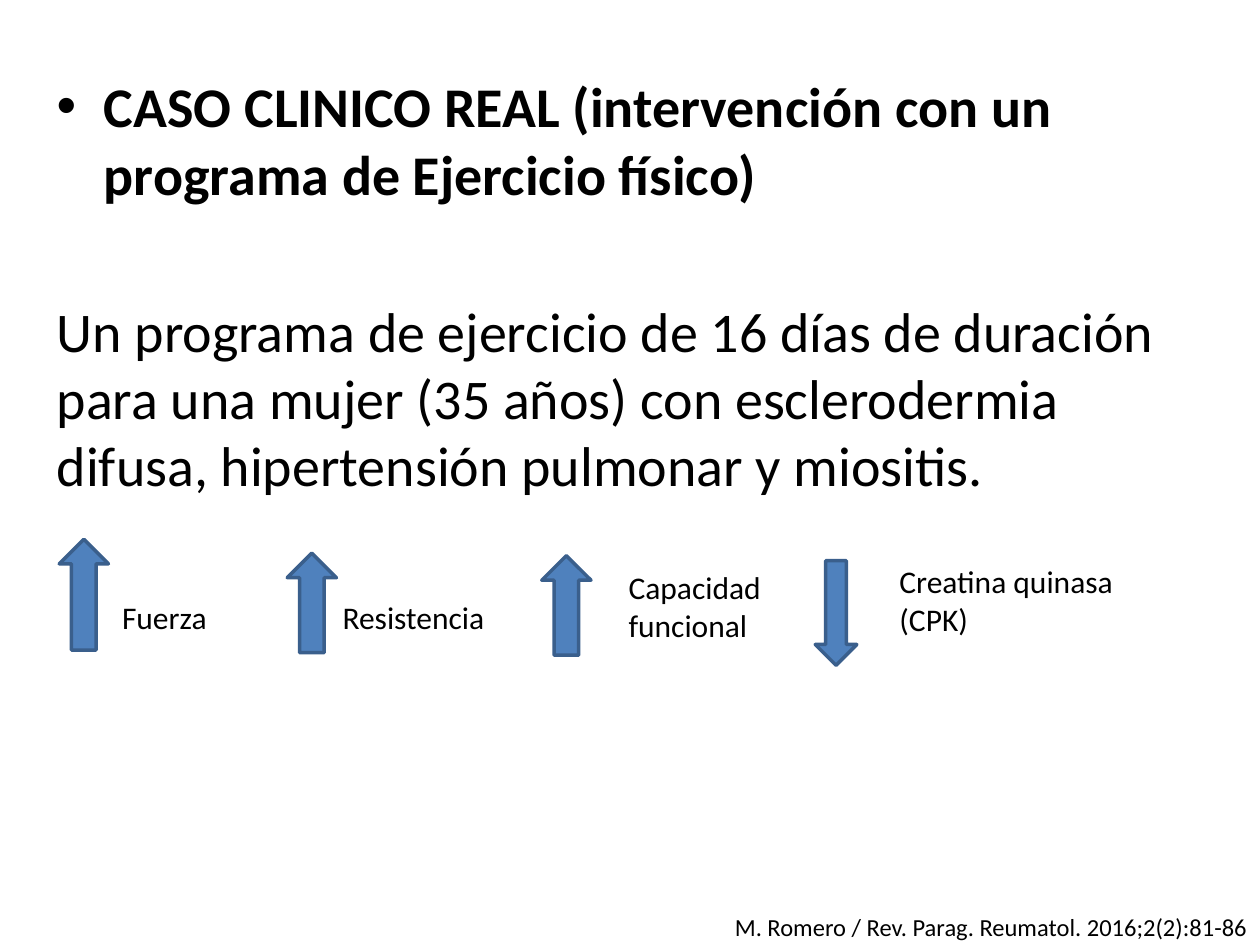
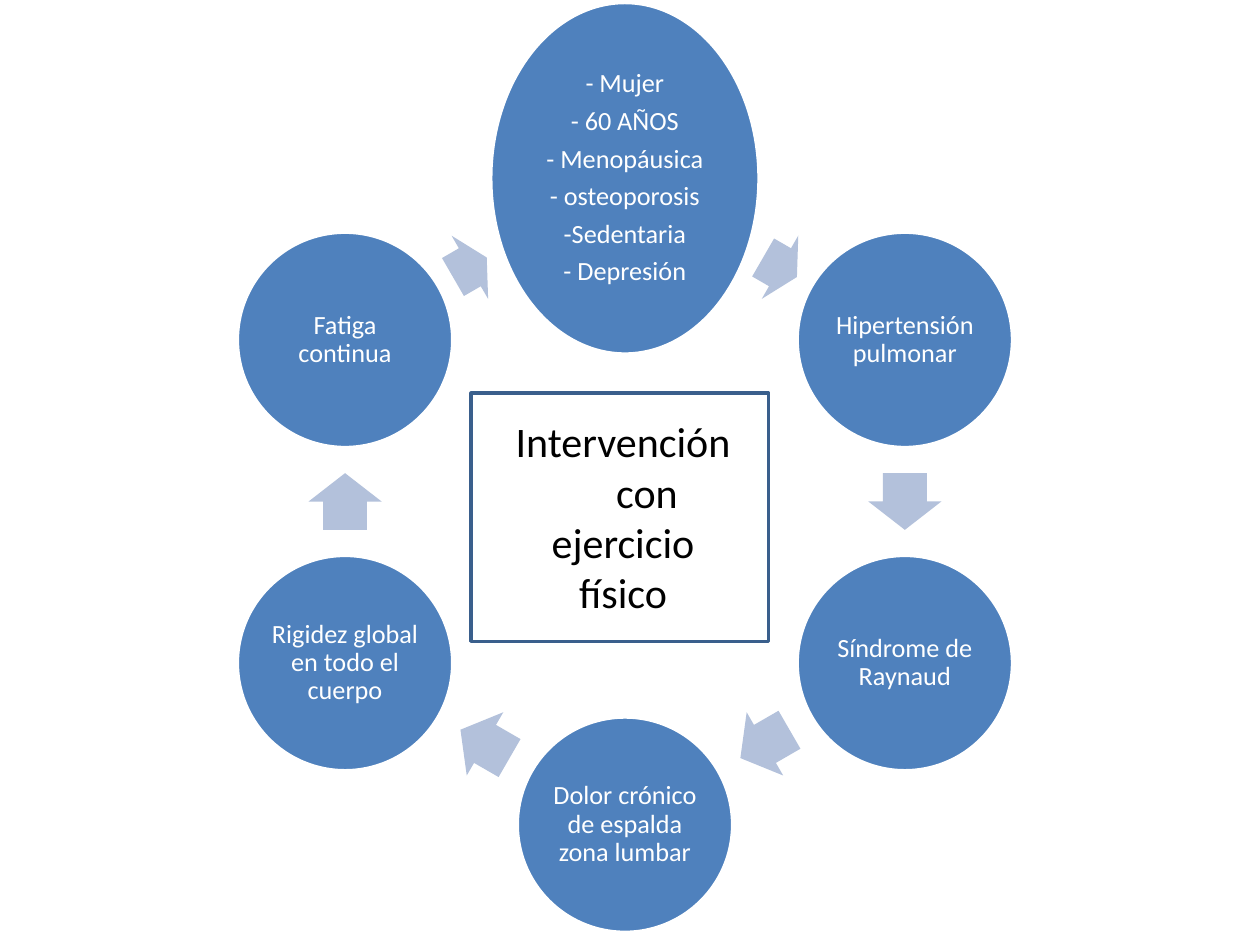
from dataclasses import dataclass, field
from math import cos, radians, sin
from typing import Any

from pptx import Presentation
from pptx.dml.color import RGBColor
from pptx.enum.shapes import MSO_SHAPE
from pptx.enum.text import MSO_ANCHOR, MSO_AUTO_SIZE, PP_ALIGN
from pptx.oxml import parse_xml
from pptx.oxml.ns import nsdecls
from pptx.util import Inches, Pt

COLORS = {
    "text": "000000",
    "blue": "4F81BD",
    "outline": "3A5F8C",
    "pale": "B3C1DB",
    "white": "FFFFFF",
}
FONT = "Calibri"
COLUMNS, ROWS = 100, 75
BODY_LAYOUT, BLANK_LAYOUT = 1, 6


def rgb(name):
    return RGBColor.from_string(COLORS[name])


def write_text(frame, text, size=18, color="text", bold=False, align=PP_ALIGN.LEFT,
               anchor=MSO_ANCHOR.TOP, inset=None, spacing=None, before=0, after=0,
               plain=False, indent=0, append=False):
    frame.word_wrap = True
    frame.auto_size = MSO_AUTO_SIZE.NONE
    frame.vertical_anchor = anchor
    if inset is not None:
        frame.margin_left = frame.margin_right = Inches(inset)
        frame.margin_top = frame.margin_bottom = Inches(inset)
    for index, line in enumerate(text.split("\n")):
        new = append or index > 0
        paragraph = frame.add_paragraph() if new else frame.paragraphs[0]
        paragraph.text = line
        if plain:
            properties = paragraph._p.get_or_add_pPr()
            properties.set("marL", str(Inches(indent)))
            properties.set("indent", "0")
            properties.append(parse_xml(f"<a:buNone {nsdecls('a')}/>"))
        paragraph.alignment = align
        paragraph.line_spacing = spacing
        paragraph.space_before = Pt(before)
        paragraph.space_after = Pt(after)
        paragraph.font.name = FONT
        paragraph.font.size = Pt(size)
        paragraph.font.bold = bold
        paragraph.font.color.rgb = rgb(color)


@dataclass
class Deck:
    presentation: Any = field(default_factory=Presentation)
    slide: Any = None

    def set_size(self, width, height):
        self.presentation.slide_width = Inches(width)
        self.presentation.slide_height = Inches(height)

    def add_slide(self, layout):
        layouts = self.presentation.slide_layouts
        self.slide = self.presentation.slides.add_slide(layouts[layout])

    def place(self, column, row, columns, rows):
        column_width = self.presentation.slide_width / COLUMNS
        row_height = self.presentation.slide_height / ROWS
        return (round(column * column_width), round(row * row_height),
                round(columns * column_width), round(rows * row_height))

    def body(self, *place):
        title = self.slide.shapes.title.element
        title.getparent().remove(title)
        body = self.slide.placeholders[1]
        body.left, body.top, body.width, body.height = self.place(*place)
        return body.text_frame

    def label(self, text, *place, **style):
        box = self.slide.shapes.add_textbox(*self.place(*place))
        write_text(box.text_frame, text, **style)
        return box.text_frame

    def shape(self, kind, *place, fill=None, line=None, rotation=0):
        shape = self.slide.shapes.add_shape(kind, *self.place(*place))
        shape.shadow.inherit = False
        shape.rotation = rotation
        if fill:
            shape.fill.solid()
            shape.fill.fore_color.rgb = rgb(fill)
        else:
            shape.fill.background()
        if line:
            shape.line.color.rgb = rgb(line)
            shape.line.width = Pt(2)
        else:
            shape.line.fill.background()
        return shape

    def effect(self, text, arrow_place, label_place, rotation=0):
        self.shape(MSO_SHAPE.UP_ARROW, *arrow_place, fill="blue", line="outline",
                   rotation=rotation)
        self.label(text, *label_place)

    def ring_node(self, text, x, y, width, height):
        node = self.shape(MSO_SHAPE.OVAL, x - width / 2, y - height / 2, width, height,
                          fill="blue", line="white")
        write_text(node.text_frame, text, size=15, color="white", align=PP_ALIGN.CENTER,
                   anchor=MSO_ANCHOR.MIDDLE, inset=0.02, spacing=0.9, after=5.25)

    def ring_arrow(self, x, y, length, rotation):
        thickness = 5.8
        arrow = self.shape(MSO_SHAPE.RIGHT_ARROW, x - length / 2, y - thickness / 2,
                           length, thickness, fill="pale", rotation=rotation)
        arrow.adjustments[0] = 0.6
        arrow.adjustments[1] = 0.5


def build_case_slide(deck):
    deck.add_slide(BODY_LAYOUT)
    frame = deck.body(3.5, 5.2, 92.9, 65.4)
    write_text(frame, "CASO CLINICO REAL (intervención con un programa de Ejercicio físico)",
               size=32, bold=True)
    write_text(frame, "Un programa de ejercicio de 16 días de duración para una mujer "
               "(35 años) con esclerodermia difusa, hipertensión pulmonar y miositis.",
               size=32, before=51.5, plain=True, append=True)
    deck.label("M. Romero / Rev. Parag. Reumatol. 2016;2(2):81-86", 51.6, 71.2, 48.4, 4,
               size=14, align=PP_ALIGN.RIGHT, anchor=MSO_ANCHOR.BOTTOM)

    effects = [
        ("Fuerza", (4.7, 42.8, 3.9, 8.8), (8.7, 47, 20.5, 4), 0),
        ("Resistencia", (22.8, 43.9, 3.9, 7.9), (26.2, 47, 20.5, 4), 0),
        ("Capacidad funcional", (43, 44.1, 3.9, 7.9), (48.9, 44.6, 20.5, 7.1), 0),
        ("Creatina quinasa (CPK)", (64.7, 44.5, 3.3, 8.3), (70.4, 44.1, 20.5, 7.1), 180),
    ]
    for effect in effects:
        deck.effect(*effect)


def build_cycle_slide(deck):
    deck.add_slide(BLANK_LAYOUT)
    center_x, center_y, radius, diameter = 49.6, 39.8, 25.65, 17.1
    arrow_radius = radius * cos(radians(30))
    nodes = [
        "- Mujer\n- 60 AÑOS\n- Menopáusica\n- osteoporosis\n-Sedentaria\n- Depresión",
        "Hipertensión pulmonar",
        "Síndrome de Raynaud",
        "Dolor crónico de espalda zona lumbar",
        "Rigidez global en todo el cuerpo",
        "Fatiga continua",
    ]
    step = 360 / len(nodes)
    for index, text in enumerate(nodes):
        angle = radians(index * step - 90)
        size = (21.3, 27.9) if index == 0 else (diameter, diameter)
        deck.ring_node(text, center_x + radius * cos(angle),
                       center_y + radius * sin(angle), *size)

        rotation = (index + 0.5) * step
        angle = radians(rotation - 90)
        x, y = center_x + arrow_radius * cos(angle), center_y + arrow_radius * sin(angle)
        beside_top = index in (0, len(nodes) - 1)
        if beside_top:
            x += 1.2 if index == 0 else -1.2
            y += 0.65
        deck.ring_arrow(x, y, 3.1 if beside_top else 4.5, rotation)

    deck.shape(MSO_SHAPE.RECTANGLE, 37.4, 31.2, 23.6, 19.7, line="outline")
    center = {"size": 24, "align": PP_ALIGN.CENTER}
    frame = deck.label("Intervención", 39.2, 32.5, 20.5, 17.2, **center)
    write_text(frame, "con", plain=True, indent=0.38, append=True, **center)
    write_text(frame, "ejercicio físico", append=True, **center)


def main():
    deck = Deck()
    deck.set_size(10, 7.5)
    build_case_slide(deck)
    build_cycle_slide(deck)
    deck.presentation.save("out.pptx")


if __name__ == "__main__":
    main()
